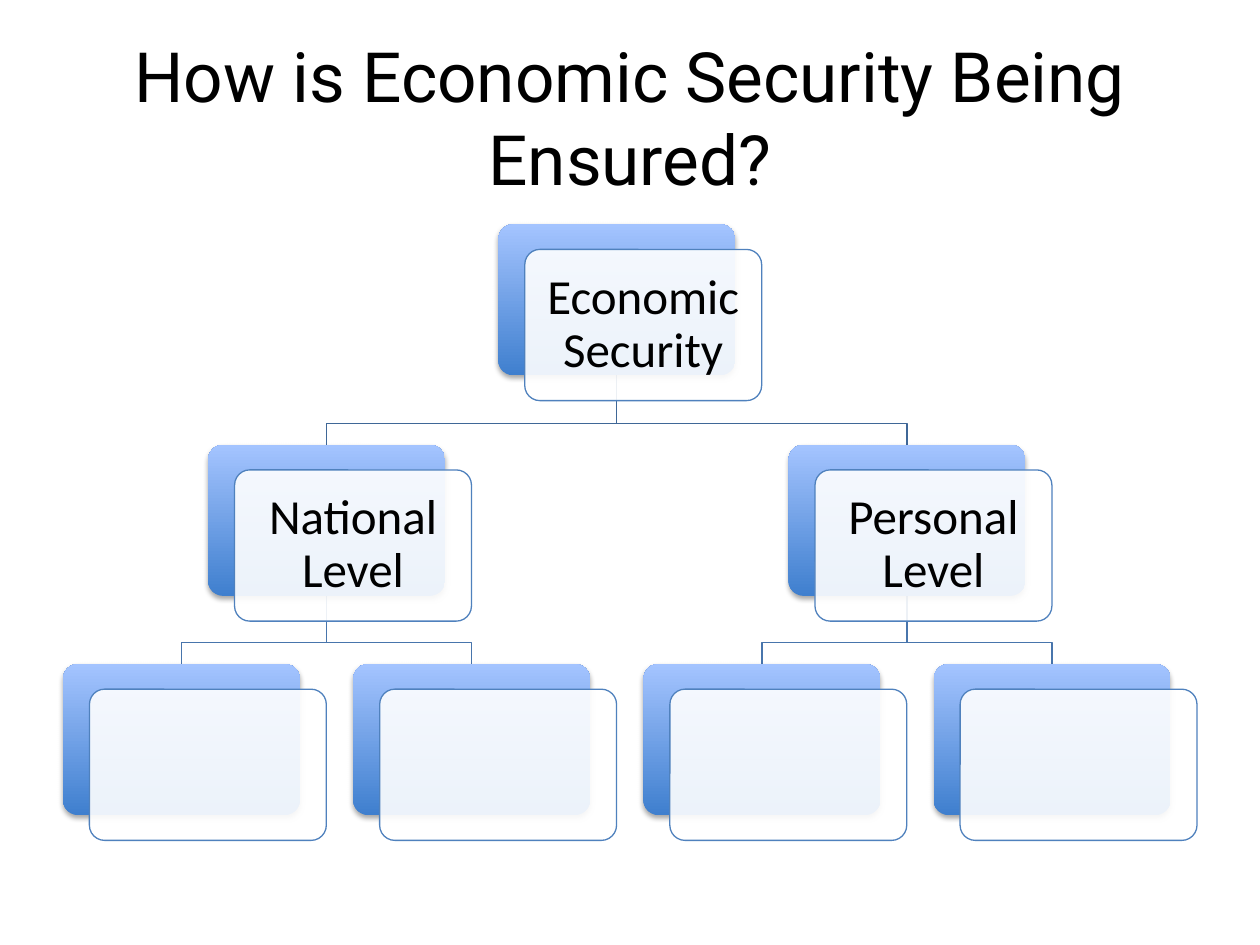
import pptx
import pptx.dml.color
import pptx.enum.shapes
import pptx.enum.text
import pptx.util
from lxml import etree
from pptx.oxml.ns import qn

Inches = pptx.util.Inches
Pt = pptx.util.Pt

HEADING = "How is Economic Security Being Ensured?"
HIERARCHY = ("Economic Security", [
    ("National Level", [("", []), ("", [])]),
    ("Personal Level", [("", []), ("", [])]),
])

THEME = {
    "heading_font": "Roboto", "heading_size": 39.6,
    "level_font": "Calibri", "level_size": 28,
    "text": "000000", "card": "FFFFFF", "card_line": "4F81BD",
    "gradient": ("3F7FCE", "A4C4FF"), "shadow": "000000",
    "branches": ("3F6797", "4875AC"), "line_width": 0.75,
}

MARGIN, SPAN = 0.5, 9
BOX_WIDTH, BOX_HEIGHT, CORNER = 1.88, 1.2, 0.1
CARD_SHIFT = (0.21, 0.2)
LEVEL_TOPS = (1.78, 3.53, 5.27)
LEAF_COUNT = 4
BEND = 0.17
LEAF_PITCH = (SPAN - BOX_WIDTH - CARD_SHIFT[0]) / (LEAF_COUNT - 1)


def rgb(key):
    return pptx.dml.color.RGBColor.from_string(key)


def write(frame, words, font, size, inset_x, inset_y):
    frame.word_wrap = True
    frame.vertical_anchor = pptx.enum.text.MSO_ANCHOR.MIDDLE
    frame.margin_left = frame.margin_right = Inches(inset_x)
    frame.margin_top = frame.margin_bottom = Inches(inset_y)
    paragraph = frame.paragraphs[0]
    paragraph.text = words
    paragraph.alignment = pptx.enum.text.PP_ALIGN.CENTER
    paragraph.font.name = font
    paragraph.font.size = Pt(size)
    paragraph.font.color.rgb = rgb(THEME["text"])
    return paragraph


def place(node, level=0, first_leaf=0):
    words, children = node
    placed, next_leaf = [], first_leaf
    for child in children:
        branch, next_leaf = place(child, level + 1, next_leaf)
        placed.append(branch)
    if placed:
        left = (placed[0]["left"] + placed[-1]["left"]) / 2
    else:
        left = MARGIN + first_leaf * LEAF_PITCH
        next_leaf += 1
    return {"words": words, "level": level, "left": left,
            "top": LEVEL_TOPS[level], "children": placed}, next_leaf


def rounded(shapes, left, top):
    box = shapes.add_shape(
        pptx.enum.shapes.MSO_SHAPE.ROUNDED_RECTANGLE,
        Inches(left), Inches(top), Inches(BOX_WIDTH), Inches(BOX_HEIGHT))
    box.adjustments[0] = CORNER
    box.shadow.inherit = False
    return box


def draw_branches(shapes, node):
    start_x = node["left"] + BOX_WIDTH / 2
    start_y = node["top"] + BOX_HEIGHT
    for child in reversed(node["children"]):
        draw_branches(shapes, child)
        end_x = child["left"] + BOX_WIDTH / 2
        bend_y = child["top"] - BEND
        builder = shapes.build_freeform(Inches(start_x), Inches(start_y))
        builder.add_line_segments(
            [(Inches(x), Inches(y)) for x, y in
             ((start_x, bend_y), (end_x, bend_y), (end_x, child["top"]))],
            close=False)
        branch = builder.convert_to_shape()
        branch.fill.background()
        branch.line.color.rgb = rgb(THEME["branches"][node["level"]])
        branch.line.width = Pt(THEME["line_width"])
        branch.shadow.inherit = False


def draw_boxes(shapes, node):
    backing = rounded(shapes, node["left"], node["top"])
    backing.fill.gradient()
    backing.fill.gradient_angle = 90
    for stop, color, position in zip(
            backing.fill.gradient_stops, THEME["gradient"], (0, 1)):
        stop.color.rgb = rgb(color)
        stop.position = position
    backing.line.fill.background()
    effects = backing._element.spPr.find(qn("a:effectLst"))
    shadow = etree.SubElement(
        effects, qn("a:outerShdw"), blurRad=str(Pt(3.1)), dist=str(Pt(1.8)),
        dir="5400000", rotWithShape="0")
    shade = etree.SubElement(shadow, qn("a:srgbClr"), val=THEME["shadow"])
    etree.SubElement(shade, qn("a:alpha"), val="35000")

    card = rounded(shapes, node["left"] + CARD_SHIFT[0], node["top"] + CARD_SHIFT[1])
    card.fill.solid()
    card.fill.fore_color.rgb = rgb(THEME["card"])
    tint = card._element.spPr.find(qn("a:solidFill")).find(qn("a:srgbClr"))
    etree.SubElement(tint, qn("a:alpha"), val="90000")
    card.line.color.rgb = rgb(THEME["card_line"])
    card.line.width = Pt(THEME["line_width"])
    if node["words"]:
        label = write(card.text_frame, node["words"], THEME["level_font"],
                      THEME["level_size"], 0.12, 0.12)
        label.line_spacing = 0.9
    for child in node["children"]:
        draw_boxes(shapes, child)


def main():
    deck = pptx.Presentation()
    deck.slide_width, deck.slide_height = Inches(10), Inches(7.5)
    slide = deck.slides.add_slide(deck.slide_layouts[6])
    heading = slide.shapes.add_textbox(
        Inches(MARGIN), Inches(0.3), Inches(SPAN), Inches(1.25))
    write(heading.text_frame, HEADING, THEME["heading_font"],
          THEME["heading_size"], 0.1, 0.05)
    security, _ = place(HIERARCHY)
    draw_branches(slide.shapes, security)
    draw_boxes(slide.shapes, security)
    deck.save("out.pptx")


if __name__ == "__main__":
    main()
